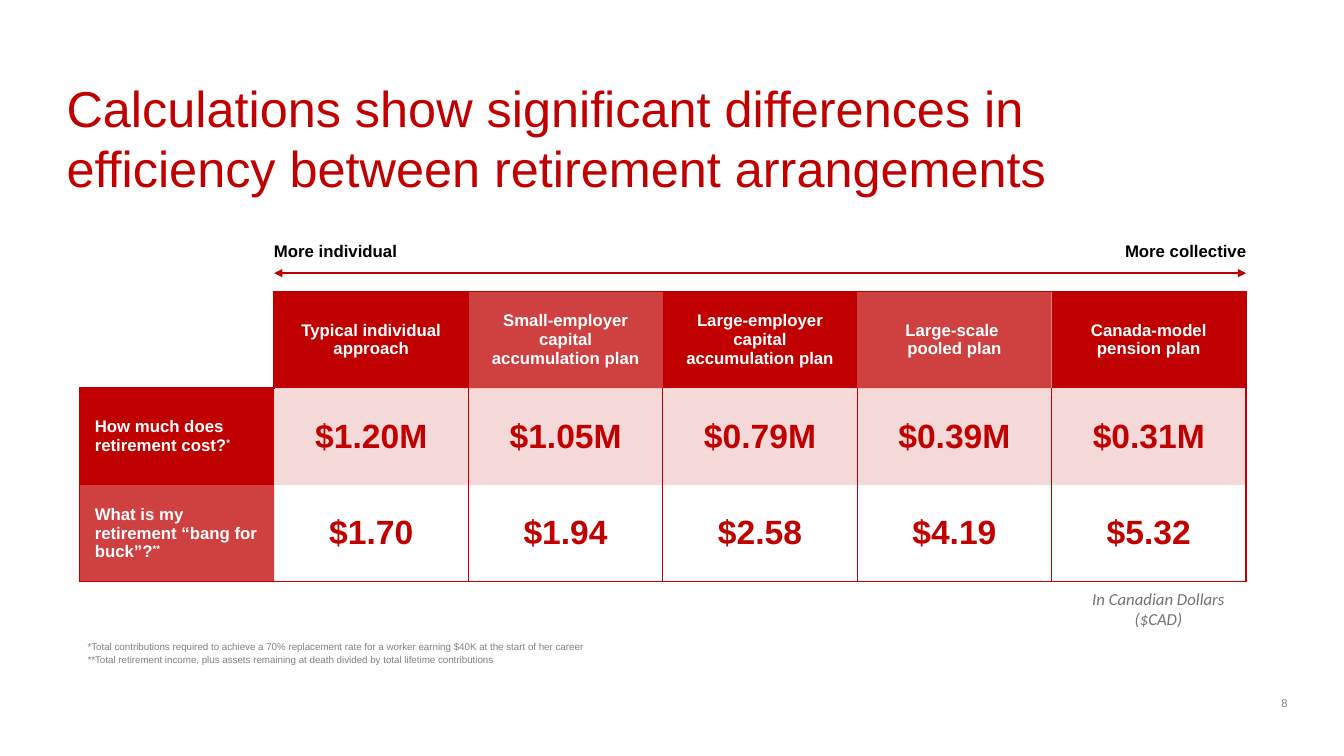
from lxml import etree
from pptx import Presentation, util as u
from pptx.dml.color import RGBColor
from pptx.enum import shapes, text
from pptx.oxml import ns

RED = RGBColor(0xC0, 0x00, 0x00)
WHITE = RGBColor(0xFF, 0xFF, 0xFF)
BLACK = RGBColor(0x00, 0x00, 0x00)
GREY = RGBColor(0x80, 0x80, 0x80)
WARM_GREY = RGBColor(0x76, 0x71, 0x71)
LEFT, CENTER, RIGHT = text.PP_ALIGN.LEFT, text.PP_ALIGN.CENTER, text.PP_ALIGN.RIGHT
MIDDLE = text.MSO_ANCHOR.MIDDLE
NO_GRID_STYLE = "{2D5ABB26-0587-4C30-8999-92F81FD0307C}"

# Table grid, in inches
COLS, ROWS = 6, 3
X0, Y0, TABLE_W, TABLE_H = 0.79, 2.89, 11.57, 2.88
COL, ROW = TABLE_W / COLS, TABLE_H / ROWS
GRID_LEFT, GRID_RIGHT = X0 + COL, X0 + TABLE_W
INSET = 0.1
LABEL_W = 1.59

HEADERS = ["Typical individual approach", "Small-employer capital accumulation plan",
           "Large-employer capital accumulation plan", "Large-scale \npooled plan",
           "Canada-model pension plan"]
MEASURES = [
    ("How much does retirement cost?", "*",
     ["$1.20M", "$1.05M", "$0.79M", "$0.39M", "$0.31M"]),
    ("What is my retirement “bang for buck”?", "**",
     ["$1.70", "$1.94", "$2.58", "$4.19", "$5.32"]),
]
FOOTNOTES = ["*Total contributions required to achieve a 70% replacement rate for a worker "
             "earning $40K at the start of her career",
             "**Total retirement income, plus assets remaining at death divided by total "
             "lifetime contributions"]


def add_run(p, words, size, color, font="Arial", bold=False, italic=False, raised=False):
    for i, line in enumerate(words.split("\n")):
        if i:
            p.add_line_break()
        r = p.add_run()
        r.text = line
        r.font.name, r.font.size = font, u.Pt(size)
        r.font.bold, r.font.italic = bold, italic
        r.font.color.rgb = color
        if raised:
            r.font._element.set("baseline", "30000")


def add_text(s, box, words, size, color, align=LEFT, **style):
    sp = s.shapes.add_textbox(*map(u.Inches, box))
    tf = sp.text_frame
    tf.word_wrap = True
    p = tf.paragraphs[0]
    p.alignment = align
    add_run(p, words, size, color, **style)
    return tf


def add_title(s, words):
    title = s.shapes.title
    title.left, title.top, title.width, title.height = map(u.Inches, (0.56, 0.71, 11.79, 1.31))
    tf = title.text_frame
    tf.vertical_anchor = MIDDLE
    p = tf.paragraphs[0]
    p.alignment = LEFT
    add_run(p, words, 36, RED)


def add_double_arrow(s, x1, x2, y):
    line = s.shapes.add_connector(shapes.MSO_CONNECTOR.STRAIGHT,
                                  *map(u.Inches, (x1, y, x2, y)))
    line.line.color.rgb = RED
    line.line.width = u.Pt(1)
    ln = line.line._get_or_add_ln()
    for end in ("a:headEnd", "a:tailEnd"):
        etree.SubElement(ln, ns.qn(end), type="triangle")
    etree.SubElement(line._element.spPr, ns.qn("a:effectLst"))


def set_borders(cell, sides):
    tc_pr = cell._tc.get_or_add_tcPr()
    for side in "LRTB":
        if side in sides:
            ln = etree.SubElement(tc_pr, ns.qn("a:ln" + side), w=str(u.Pt(1)))
            fill = etree.SubElement(ln, ns.qn("a:solidFill"))
            etree.SubElement(fill, ns.qn("a:srgbClr"), val=str(RED))


def set_fill(cell, opacity):
    if not opacity:
        cell.fill.background()
        return
    cell.fill.solid()
    cell.fill.fore_color.rgb = RED
    if opacity < 100:
        color = cell._tc.tcPr.find(ns.qn("a:solidFill"))[0]
        etree.SubElement(color, ns.qn("a:alpha"), val=str(opacity * 1000))


def format_cell(cell, opacity, borders, align=CENTER):
    cell.vertical_anchor = MIDDLE
    cell.margin_left = cell.margin_right = u.Inches(0.15)
    cell.margin_top = cell.margin_bottom = 0
    set_borders(cell, borders)
    set_fill(cell, opacity)
    p = cell.text_frame.paragraphs[0]
    p.alignment = align
    return p


def add_plan_table(s):
    frame = s.shapes.add_table(ROWS, COLS, *map(u.Inches, (X0, Y0, TABLE_W, TABLE_H)))
    table = frame.table
    table.first_row = table.horz_banding = False
    table._tbl.tblPr[0].text = NO_GRID_STYLE
    for column in table.columns:
        column.width = u.Inches(COL)
    for row in table.rows:
        row.height = u.Inches(ROW)

    # Header row, shades alternating
    format_cell(table.cell(0, 0), 0, "RB")
    for c, header in enumerate(HEADERS, 1):
        borders = "T" + ("L" if c == 1 else "") + ("R" if c == COLS - 1 else "")
        p = format_cell(table.cell(0, c), 100 if c % 2 else 75, borders)
        add_run(p, header, 12, WHITE, bold=True)

    # Measure rows
    for i, (question, mark, values) in enumerate(MEASURES, 1):
        bottom = "B" if i == ROWS - 1 else ""
        p = format_cell(table.cell(i, 0), 100 if i % 2 else 75,
                        "L" + ("T" if i == 1 else "") + bottom, LEFT)
        add_run(p, question, 12, WHITE, bold=True)
        add_run(p, mark, 12, WHITE, bold=True, raised=True)
        for c, value in enumerate(values, 1):
            borders = ("R" if c == 1 else "LR") + bottom
            p = format_cell(table.cell(i, c), 15 if i % 2 else 0, borders)
            add_run(p, value, 24, RED, bold=True)


def main():
    prs = Presentation()
    prs.slide_width, prs.slide_height = u.Inches(13.33), u.Inches(7.5)
    s = prs.slides.add_slide(prs.slide_layouts[5])

    add_title(s, "Calculations show significant differences in efficiency "
                 "between retirement arrangements")
    add_plan_table(s)

    # Scale above the plans
    add_double_arrow(s, GRID_LEFT, GRID_RIGHT, 2.71)
    for x, words, align in ((GRID_LEFT - INSET, "More individual", LEFT),
                            (GRID_RIGHT + INSET - LABEL_W, "More collective", RIGHT)):
        add_text(s, (x, 2.34, LABEL_W, 0.3), words, 12, BLACK, align, bold=True)

    # Notes and page number
    add_text(s, (10.59, 5.79, 1.8, 0.5), "In Canadian Dollars ($CAD)", 12, WARM_GREY,
             CENTER, font="Calibri", italic=True)
    tf = add_text(s, (0.77, 6.3, 12, 0.35), "\n".join(FOOTNOTES), 7, GREY)
    tf.paragraphs[0].line_spacing = 1.1
    tf = add_text(s, (12.22, 6.77, 0.55, 0.4), "8", 8, GREY, RIGHT)
    tf.margin_left = tf.margin_right = tf.margin_top = tf.margin_bottom = 0
    tf.vertical_anchor = MIDDLE

    prs.save("out.pptx")


if __name__ == "__main__":
    main()
